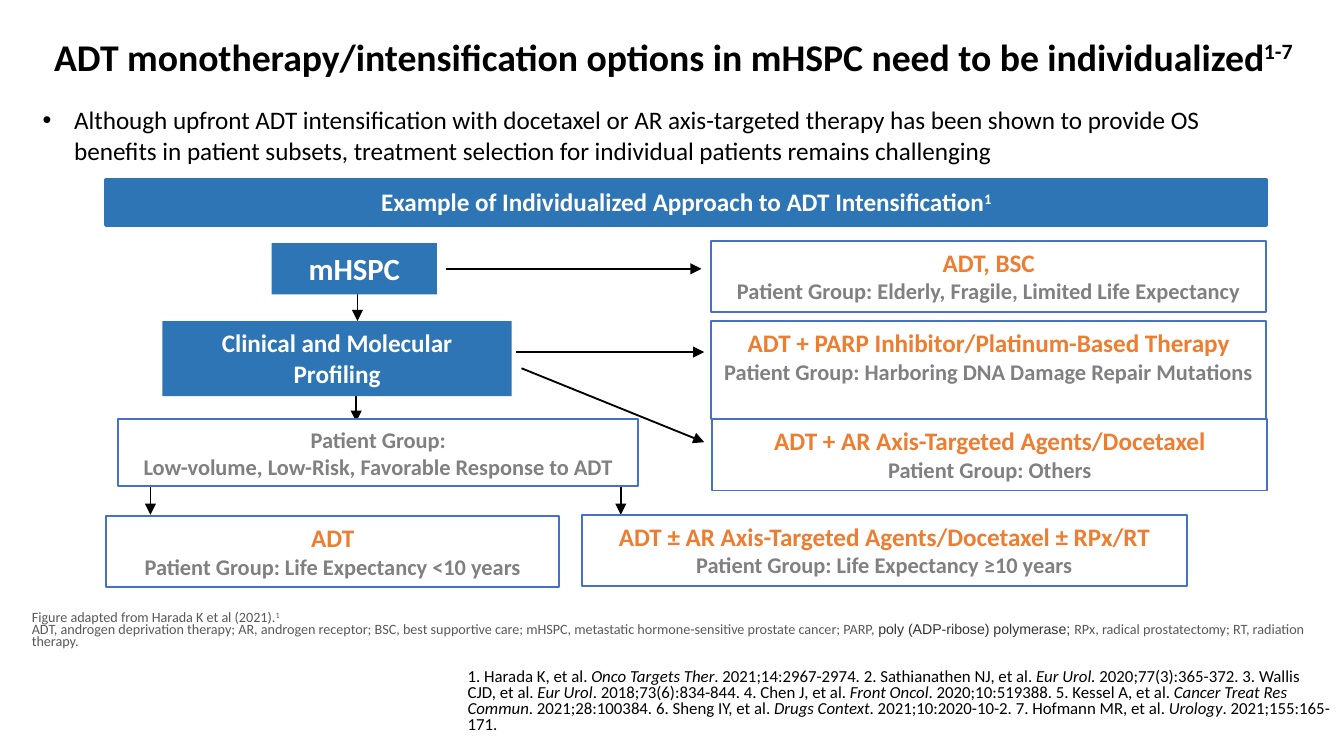
from pptx import Presentation
from pptx.dml.color import RGBColor
from pptx.enum.shapes import MSO_CONNECTOR, MSO_SHAPE
from pptx.enum.text import MSO_ANCHOR, PP_ALIGN
from pptx.oxml.ns import qn
from pptx.util import Pt
from lxml import etree

BLACK = RGBColor(0x00, 0x00, 0x00)
WHITE = RGBColor(0xFF, 0xFF, 0xFF)
BLUE = RGBColor(0x2E, 0x75, 0xB6)
OUTLINE = RGBColor(0x44, 0x72, 0xC4)
ORANGE = RGBColor(0xED, 0x7D, 0x31)
GRAY = RGBColor(0x80, 0x80, 0x80)
NOTE_GRAY = RGBColor(0x59, 0x59, 0x59)
DARK_GRAY = RGBColor(0x33, 0x33, 0x33)

CENTER, LEFT = PP_ALIGN.CENTER, PP_ALIGN.LEFT
TOP, MIDDLE = MSO_ANCHOR.TOP, MSO_ANCHOR.MIDDLE
RECT, STRAIGHT = MSO_SHAPE.RECTANGLE, MSO_CONNECTOR.STRAIGHT

SUP = {"baseline": 30000}
TITLE = {"size": 20.2, "color": BLACK, "bold": True}
LEAD = {"size": 13.5, "color": BLACK}
NOTE = {"size": 7.6, "color": NOTE_GRAY}
REFERENCE = {"size": 9, "color": BLACK}
START = {"size": 16.5, "color": WHITE, "bold": True}
LABEL = {"size": 13.5, "color": WHITE, "bold": True}
THERAPY = {"size": 13.5, "color": ORANGE, "bold": True}
GROUP = {"size": 12, "color": GRAY, "bold": True}

REFERENCES = (
    "1. Harada K, et al. *Onco Targets Ther*. 2021;14:2967-2974. "
    "2. Sathianathen NJ, et al. *Eur Urol. *2020;77(3):365-372. "
    "3. Wallis CJD, et al. *Eur Urol*. 2018;73(6):834-844. "
    "4. Chen J, et al. *Front Oncol*. 2020;10:519388. "
    "5. Kessel A, et al. *Cancer Treat Res Commun*. 2021;28:100384. "
    "6. Sheng IY, et al. *Drugs Context*. 2021;10:2020-10-2. "
    "7. Hofmann MR, et al. *Urology*. 2021;155:165-171."
)


def add_run(p, text, style):
    r = p.add_run()
    r.text = text
    for name, value in {"name": "Calibri", **style}.items():
        if name == "color":
            r.font.color.rgb = value
        elif name == "baseline":
            r._r.get_or_add_rPr().set(name, str(value))
        else:
            setattr(r.font, name, Pt(value) if name == "size" else value)


def fill_text(sp, paragraphs, align=LEFT, anchor=TOP, spacing=1.0, inset=7.2):
    tf = sp.text_frame
    frame = {"word_wrap": True, "vertical_anchor": anchor,
             "margin_left": Pt(inset), "margin_right": Pt(inset),
             "margin_top": Pt(3.6), "margin_bottom": Pt(3.6)}
    for name, value in frame.items():
        setattr(tf, name, value)
    for i, runs in enumerate(paragraphs):
        p = tf.add_paragraph() if i else tf.paragraphs[0]
        p.alignment, p.line_spacing = align, spacing
        for text, style in runs:
            add_run(p, text, style)


def add_text(s, box, paragraphs, **layout):
    sp = s.shapes.add_textbox(*map(Pt, box))
    fill_text(sp, paragraphs, **layout)
    return sp


def add_box(s, box, paragraphs, fill, line=None, width=1, inset=5.4):
    sp = s.shapes.add_shape(RECT, *map(Pt, box))
    sp.shadow.inherit = False
    sp.fill.solid()
    sp.fill.fore_color.rgb = fill
    if line is None:
        sp.line.fill.background()
    else:
        sp.line.color.rgb = line
        sp.line.width = Pt(width)
    fill_text(sp, paragraphs, align=CENTER, inset=inset)


def add_arrow(s, x1, y1, x2, y2):
    c = s.shapes.add_connector(STRAIGHT, Pt(x1), Pt(y1), Pt(x2), Pt(y2))
    c.line.color.rgb = BLACK
    c.line.width = Pt(1)
    etree.SubElement(c.line._get_or_add_ln(), qn("a:tailEnd"), type="triangle")
    etree.SubElement(c._element.spPr, qn("a:effectLst"))


def add_title(s, box):
    text = "ADT monotherapy/intensification options in mHSPC need to be individualized"
    add_text(s, box, [[(text, TITLE), ("1-7", TITLE | SUP)]],
             align=CENTER, anchor=MIDDLE, spacing=0.9)


def add_lead(s, box):
    text = ("Although upfront ADT intensification with docetaxel or AR axis-targeted "
            "therapy has been shown to provide OS benefits in patient subsets, "
            "treatment selection for individual patients remains challenging")
    sp = add_text(s, box, [[(text, LEAD)]])
    pPr = sp.text_frame.paragraphs[0]._p.get_or_add_pPr()
    pPr.set("marL", str(Pt(16.9)))
    pPr.set("indent", str(-Pt(16.9)))
    etree.SubElement(pPr, qn("a:buFont"), typeface="Arial")
    etree.SubElement(pPr, qn("a:buChar"), char="•")


def add_banner(s, box):
    text = "Example of Individualized Approach to ADT Intensification"
    add_box(s, box, [[(text, LABEL), ("1", LABEL | SUP)]], BLUE, BLUE, 2.25)


def add_flowchart(s, box):
    x, y, w, h = box
    row, outcome_w, outcome_h = 43, 297.4, 38.2
    outcome_x = w - outcome_w
    last_y = h - outcome_h
    arrows = [
        (182, 15, 318.8, 15),
        (134.5, 28, 134.5, row),
        (133.8, 83.4, 133.8, 97),
        (219.5, 59.6, 320.3, 59.6),
        (222.4, 68.3, 320.3, 107.9),
        (23.6, 131, 23.6, last_y),
        (275.6, 131, 275.6, last_y),
    ]
    steps = [
        (88.5, 1.3, 88.6, 27.4, "mHSPC", START),
        (30, row, 187.2, 40.3, "Clinical and Molecular Profiling", LABEL),
    ]
    outcomes = [
        (outcome_x, 0, outcome_w, outcome_h, "ADT, BSC",
         "Elderly, Fragile, Limited Life Expectancy"),
        (outcome_x, row, outcome_w, 52.6, "ADT + PARP Inhibitor/Platinum-Based Therapy",
         "Harboring DNA Damage Repair Mutations"),
        (outcome_x + 0.6, 95.6, outcome_w, outcome_h,
         "ADT + AR Axis-Targeted Agents/Docetaxel", "Others"),
        (0, last_y + 0.7, 242.6, outcome_h, "ADT", "Life Expectancy <10 years"),
        (254.8, last_y, 324, outcome_h,
         "ADT ± AR Axis-Targeted Agents/Docetaxel ± RPx/RT", "Life Expectancy ≥10 years"),
    ]
    for x1, y1, x2, y2 in arrows:
        add_arrow(s, x + x1, y + y1, x + x2, y + y2)
    for dx, dy, bw, bh, text, style in steps:
        add_box(s, (x + dx, y + dy, bw, bh), [[(text, style)]], BLUE, inset=9)
    for dx, dy, bw, bh, therapy, group in outcomes:
        add_box(s, (x + dx, y + dy, bw, bh),
                [[(therapy, THERAPY)], [("Patient Group: " + group, GROUP)]],
                WHITE, OUTLINE)
    add_box(s, (x + 6.4, y + 95.6, 278.6, 36),
            [[("Patient Group:", GROUP)],
             [("Low-volume, Low-Risk, Favorable Response to ADT", GROUP)]],
            WHITE, OUTLINE)


def add_footnotes(s, box):
    abbreviations = (
        "ADT, androgen deprivation therapy; AR, androgen receptor; BSC, best supportive "
        "care; mHSPC, metastatic hormone-sensitive prostate cancer; PARP, ")
    add_text(s, box, [
        [("Figure adapted from Harada K et al (2021).", NOTE), ("1", NOTE | SUP)],
        [(abbreviations, NOTE),
         ("poly (ADP-ribose) polymerase; ", NOTE | {"name": "Arial", "color": DARK_GRAY}),
         ("RPx, radical prostatectomy; RT, radiation therapy.", NOTE)],
    ], spacing=0.7)


def add_references(s, box):
    runs = [(text, REFERENCE | {"italic": i % 2 == 1})
            for i, text in enumerate(REFERENCES.split("*"))]
    add_text(s, box, [runs], spacing=0.8)


def main():
    prs = Presentation()
    prs.slide_width, prs.slide_height = Pt(720), Pt(405)
    s = prs.slides.add_slide(prs.slide_layouts[6])
    add_title(s, (15.8, 10, 690, 43.2))
    add_lead(s, (15.8, 52.6, 676, 40.3))
    add_banner(s, (57, 96.5, 621.4, 23.8))
    add_flowchart(s, (57, 129, 621.4, 185))
    add_footnotes(s, (10, 324.7, 701.3, 29.5))
    add_references(s, (243.4, 355, 476.6, 43.2))
    prs.save("out.pptx")


if __name__ == "__main__":
    main()
